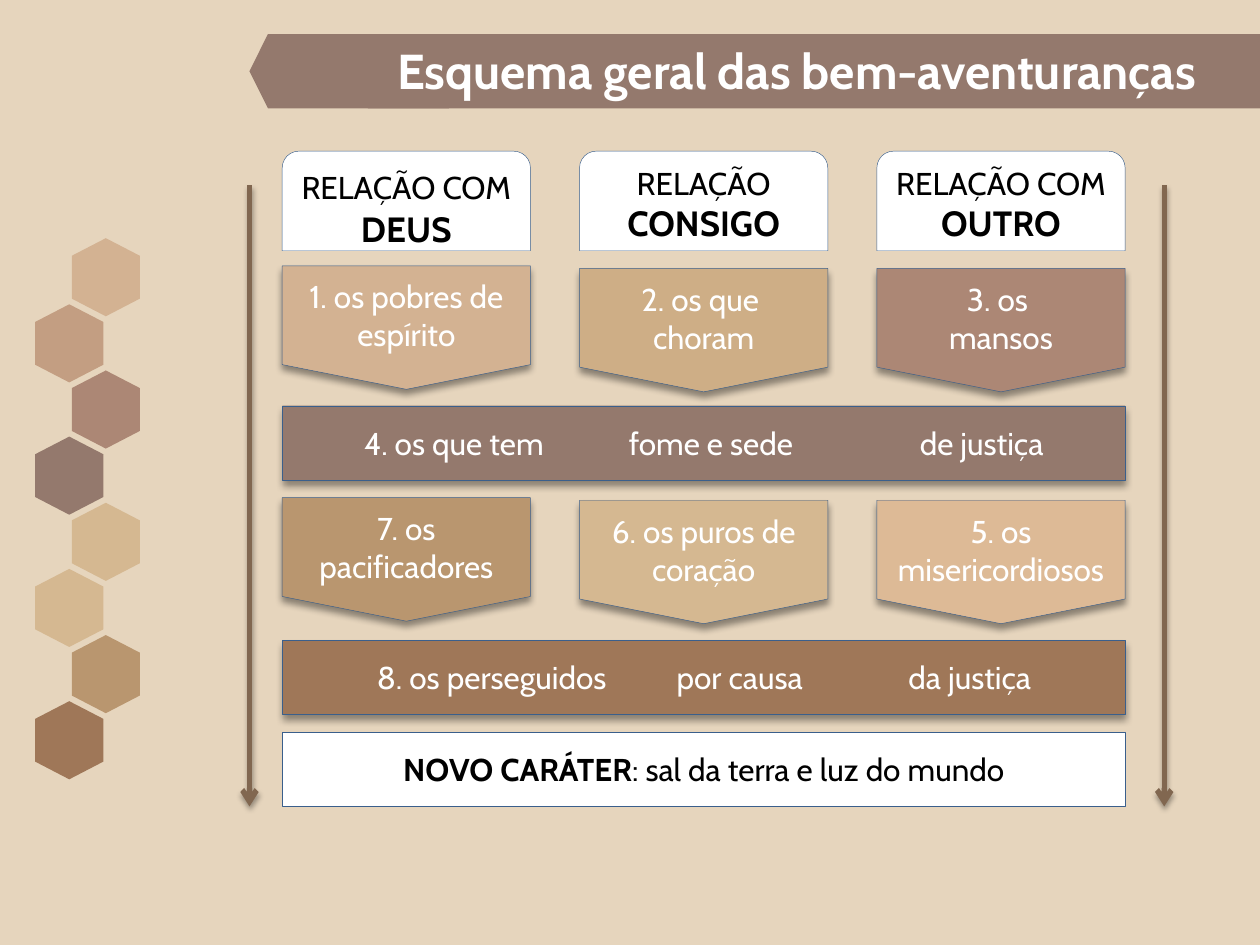
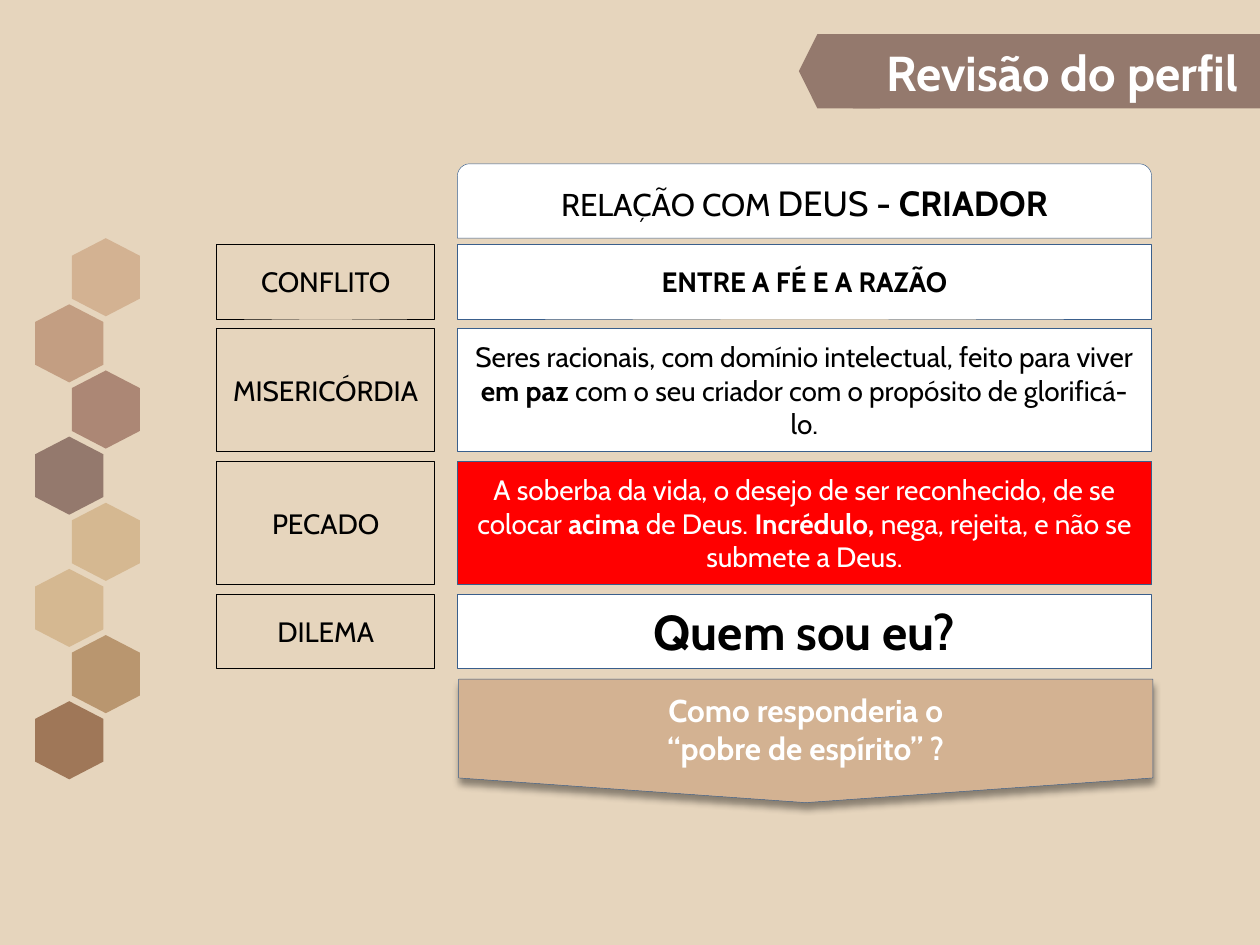
import pptx
import pptx.dml.color
import pptx.enum.shapes
import pptx.enum.text
import pptx.oxml.ns
import pptx.util
from lxml import etree

Inches = pptx.util.Inches
Pt = pptx.util.Pt
SHAPE = pptx.enum.shapes.MSO_SHAPE
ALIGN = pptx.enum.text.PP_ALIGN
ANCHOR = pptx.enum.text.MSO_ANCHOR
qn = pptx.oxml.ns.qn

FONT = "Cabin"
COLORS = {
    "sand": "E6D5BD", "white": "FFFFFF", "black": "000000", "red": "FF0000",
    "outline": "3A5F8C", "arrow": "816750", "blush": "D3B292", "clay": "C39E82",
    "rose": "AC8775", "mauve": "94796D", "wheat": "D5B891", "gold": "CEAE86",
    "peach": "DDBA96", "camel": "B9966F", "brown": "9F7758",
}
HEXAGON_COLORS = ["blush", "clay", "rose", "mauve", "wheat", "wheat", "camel", "brown"]

# Each paragraph is a list of spans: (text, size, bold)
RELATIONS = [
    [("RELAÇÃO COM", 18, False), (" ", 24, True), ("DEUS", 20, True)],
    [("RELAÇÃO ", 18, False), ("CONSIGO", 20, True)],
    [("RELAÇÃO COM ", 18, False), ("OUTRO", 20, True)],
]
# (top of the row, [(paragraph texts, color) per column])
BEATITUDE_ROWS = [
    (2.11, [(["1. os pobres de espírito"], "blush"),
            (["2. os que ", "choram"], "gold"),
            (["3. os ", "mansos"], "rose")]),
    (3.95, [(["7. os pacificadores"], "camel"),
            (["6. os puros de coração"], "wheat"),
            (["5. os misericordiosos"], "peach")]),
]
# (top, color, phrases, left edge of each phrase)
JUSTICE_BARS = [
    (3.22, "mauve", ["4. os que tem", "fome e sede", "de justiça"], [2.89, 4.99, 7.30]),
    (5.08, "brown", ["8. os perseguidos", "por causa", "da justiça"], [2.99, 5.37, 7.21]),
]
NEW_CHARACTER = [("NOVO CARÁTER", 18, True), (": sal da terra e luz do mundo", 18, False)]

PROFILE_HEADER = [("RELAÇÃO COM ", 18, False), ("DEUS", 20, False), (" - CRIADOR", 20, True)]
# (label, height, fill, text color, spans)
PROFILE_ROWS = [
    ("CONFLITO", 0.59, "white", "black", [("ENTRE A FÉ E A RAZÃO", 16, True)]),
    ("MISERICÓRDIA", 0.98, "white", "black", [
        ("Seres racionais, com domínio intelectual, feito para viver ", 16, False),
        ("em paz ", 16, True),
        ("com o seu criador com o propósito de glorificá-lo.", 16, False)]),
    ("PECADO", 0.98, "red", "white", [
        ("A soberba da vida, o desejo de ser reconhecido, de se colocar ", 16, False),
        ("acima", 16, True), (" de Deus. ", 16, False), ("Incrédulo, ", 16, True),
        ("nega, rejeita, e não se submete a Deus.", 16, False)]),
    ("DILEMA", 0.59, "white", "black", [("Quem sou eu?", 28, True)]),
]
QUESTION = ["Como responderia o", "“pobre de espírito” ?"]

BAR_HEIGHT, CARD_HEIGHT = 0.59, 0.98
GRID_LEFT, GRID_WIDTH, CARD_WIDTH = 2.24, 6.69, 1.97
COLUMN_STEP = (GRID_WIDTH - CARD_WIDTH) / 2
ROW_GAP = 0.075


def rgb(name):
    return pptx.dml.color.RGBColor.from_string(COLORS[name])


def add_shadow(effects, opacity, blur, distance):
    """Put a shadow that falls straight down in an effect list."""
    shadow = etree.SubElement(effects, qn("a:outerShdw"), blurRad=str(Pt(blur)),
                              dist=str(Pt(distance)), dir="5400000", rotWithShape="0")
    color = etree.SubElement(shadow, qn("a:srgbClr"), val=COLORS["black"])
    etree.SubElement(color, qn("a:alpha"), val=str(opacity * 1000))


def write(para, spans, color, align=ALIGN.CENTER):
    """Fill a paragraph, keeping on the runs only what differs between them."""
    para.alignment = align
    para.font.name = FONT
    para.font.color.rgb = rgb(color)
    sizes = {size for _, size, _ in spans}
    weights = {bold for _, _, bold in spans}
    if len(sizes) == 1:
        para.font.size = Pt(spans[0][1])
    if len(weights) == 1:
        para.font.bold = spans[0][2]
    for text, size, bold in spans:
        run = para.add_run()
        run.text = text
        if len(sizes) > 1:
            run.font.size = Pt(size)
        if len(weights) > 1:
            run.font.bold = bold


def add_box(page, kind, place, fill, paragraphs=(), color="white", line="outline", shadow=False):
    box = page.shapes.add_shape(kind, *map(Inches, place))
    box.shadow.inherit = False
    box.fill.solid()
    box.fill.fore_color.rgb = rgb(fill)
    if line:
        box.line.color.rgb = rgb(line)
        box.line.width = Pt(0.25)
    else:
        box.line.fill.background()
    if shadow:
        add_shadow(box._element.spPr.find(qn("a:effectLst")), 40, 4, 3)
    frame = box.text_frame
    frame.word_wrap = True
    frame.vertical_anchor = ANCHOR.MIDDLE
    for index, spans in enumerate(paragraphs):
        write(frame.add_paragraph() if index else frame.paragraphs[0], spans, color)
    return box


def add_pointed_card(page, place, fill, texts, bold=False):
    add_box(page, SHAPE.FLOWCHART_OFFPAGE_CONNECTOR, place, fill,
            [[(text, 18, bold)] for text in texts], shadow=True)


def add_justice_bar(page, top, fill, phrases, lefts):
    bar = add_box(page, SHAPE.RECTANGLE, (GRID_LEFT, top, GRID_WIDTH, BAR_HEIGHT),
                  fill, shadow=True)
    bar.text_frame.margin_left = Inches(lefts[0] - GRID_LEFT)
    para = bar.text_frame.paragraphs[0]
    tabs = etree.SubElement(para._p.get_or_add_pPr(), qn("a:tabLst"))
    for left in lefts[1:]:
        etree.SubElement(tabs, qn("a:tab"), pos=str(Inches(left - lefts[0])), algn="l")
    write(para, [("\t".join(phrases), 18, False)], "white", ALIGN.LEFT)


def add_down_arrow(page, x, top, bottom):
    arrow = page.shapes.add_connector(pptx.enum.shapes.MSO_CONNECTOR.STRAIGHT,
                                      Inches(x), Inches(top), Inches(x), Inches(bottom))
    arrow.line.color.rgb = rgb("arrow")
    arrow.line.width = Pt(3)
    etree.SubElement(arrow.line._get_or_add_ln(), qn("a:tailEnd"), type="arrow")
    effects = etree.SubElement(arrow._element.spPr, qn("a:effectLst"))
    add_shadow(effects, 35, 3.1, 1.8)


def add_title(page, text, place, banner_left, hexagon_width, rect_left):
    add_box(page, SHAPE.RECTANGLE, (rect_left, 0.27, 10 - rect_left, BAR_HEIGHT),
            "mauve", line=None)
    add_box(page, SHAPE.HEXAGON, (banner_left, 0.27, hexagon_width, BAR_HEIGHT),
            "mauve", line=None)
    title = page.shapes.title
    title.left, title.top, title.width, title.height = map(Inches, place)
    title.text_frame.auto_size = pptx.enum.text.MSO_AUTO_SIZE.NONE
    title.text_frame.vertical_anchor = ANCHOR.TOP
    write(title.text_frame.paragraphs[0], [(text, 28, True)], "white", ALIGN.RIGHT)
    page.shapes._spTree.append(title._element)  # in front of the banner


def add_hexagon_chain(page, layout):
    """Draw the side chain and move it to the layout that all slides share."""
    width, height, shoulder = 0.54, 0.62, 0.14
    for index, color in enumerate(HEXAGON_COLORS):
        left = 0.28 if index % 2 else 0.57
        top = 1.89 + 0.525 * index
        right, bottom, middle = left + width, top + height, left + width / 2
        points = [(right, top + shoulder), (right, bottom - shoulder), (middle, bottom),
                  (left, bottom - shoulder), (left, top + shoulder)]
        builder = page.shapes.build_freeform(Inches(middle), Inches(top))
        builder.add_line_segments([(Inches(x), Inches(y)) for x, y in points], close=True)
        hexagon = builder.convert_to_shape()
        hexagon.shadow.inherit = False
        hexagon.fill.solid()
        hexagon.fill.fore_color.rgb = rgb(color)
        hexagon.line.fill.background()
        layout.shapes._spTree.append(hexagon._element)


def build_scheme(page):
    add_title(page, "Esquema geral das bem-aventuranças", (2.37, 0.27, 7.22, 0.57),
              1.98, 1.73, 2.92)
    columns = [GRID_LEFT + COLUMN_STEP * index for index in range(3)]
    for left, spans in zip(columns, RELATIONS):
        add_box(page, SHAPE.ROUND_2_SAME_RECTANGLE, (left, 1.2, CARD_WIDTH, 0.79),
                "white", [spans], "black")
    for top, cards in BEATITUDE_ROWS:
        for index, (texts, fill) in enumerate(cards):
            card_top = top + (0.02 if index else 0)
            add_pointed_card(page, (columns[index], card_top, CARD_WIDTH, CARD_HEIGHT),
                             fill, texts)
    for bar in JUSTICE_BARS:
        add_justice_bar(page, *bar)
    add_box(page, SHAPE.RECTANGLE, (GRID_LEFT, 5.81, GRID_WIDTH, BAR_HEIGHT),
            "white", [NEW_CHARACTER], "black")
    for x in (9.24, 1.98):
        add_down_arrow(page, x, 1.47, 6.4)


def build_profile(page):
    add_title(page, "Revisão do perfil", (6.51, 0.29, 3.42, 0.57), 6.34, 0.79, 6.77)
    left, width = 3.63, 5.51
    add_box(page, SHAPE.ROUND_2_SAME_RECTANGLE, (left, 1.3, width, BAR_HEIGHT),
            "white", [PROFILE_HEADER], "black")
    top = 1.94
    for label, height, fill, color, spans in PROFILE_ROWS:
        add_box(page, SHAPE.RECTANGLE, (1.72, top, 1.73, height), "sand",
                [[(label, 16, False)]], "black", line="black")
        add_box(page, SHAPE.RECTANGLE, (left, top, width, height), fill, [spans], color)
        top += height + ROW_GAP
    add_pointed_card(page, (left + 0.01, 5.39, width, CARD_HEIGHT), "blush", QUESTION, True)


def main():
    deck = pptx.Presentation()
    deck.slide_width, deck.slide_height = Inches(10), Inches(7.5)
    background = deck.slide_master.background.fill
    background.solid()
    background.fore_color.rgb = rgb("sand")
    layout = deck.slide_layouts.get_by_name("Title Only")
    scheme, profile = [deck.slides.add_slide(layout) for _ in range(2)]
    add_hexagon_chain(scheme, layout)
    build_scheme(scheme)
    build_profile(profile)
    deck.save("out.pptx")


if __name__ == "__main__":
    main()
